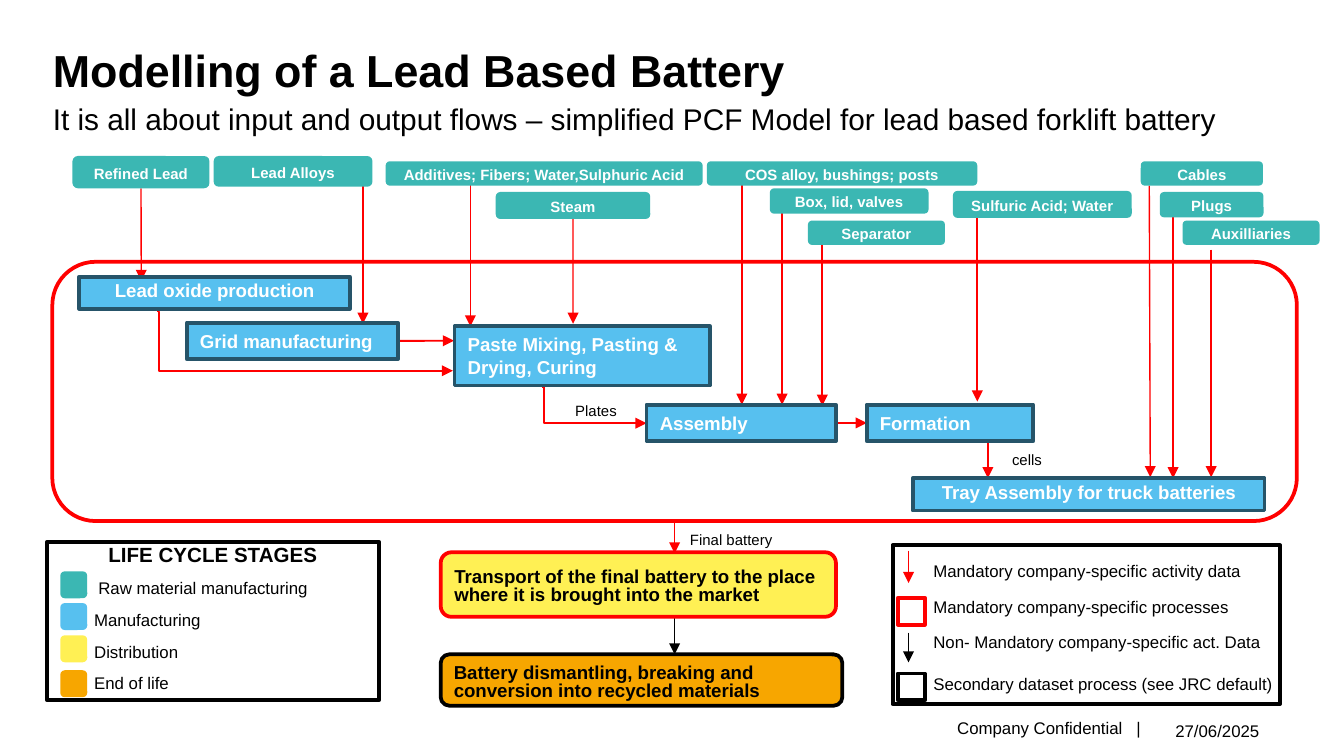
"""Build the slide on the product carbon footprint model of a lead based battery."""
import lxml.etree
import pptx
import pptx.dml.color
import pptx.enum.shapes
import pptx.enum.text
import pptx.oxml.ns
import pptx.util

Cm, Pt = pptx.util.Cm, pptx.util.Pt
RGBColor = pptx.dml.color.RGBColor
Kind = pptx.enum.shapes.MSO_SHAPE
Wire = pptx.enum.shapes.MSO_CONNECTOR
Align = pptx.enum.text.PP_ALIGN
Anchor = pptx.enum.text.MSO_ANCHOR
qn = pptx.oxml.ns.qn

BLACK = RGBColor(0x00, 0x00, 0x00)
WHITE = RGBColor(0xFF, 0xFF, 0xFF)
RED = RGBColor(0xFF, 0x00, 0x00)
TEAL = RGBColor(0x3B, 0xB7, 0xB3)
BLUE = RGBColor(0x57, 0xC0, 0xEF)
NAVY = RGBColor(0x26, 0x54, 0x69)
YELLOW = RGBColor(0xFF, 0xF0, 0x54)
ORANGE = RGBColor(0xF7, 0xA6, 0x00)

FLAT = (0, 0, 0, 0)
WIDE = (0.25, 0.13, 0.25, 0.13)
TIGHT = (0.2, 0.3, 0.2, 0.2)

deck = pptx.Presentation()
deck.slide_width, deck.slide_height = Cm(25.4), Cm(14.29)
slide = deck.slides.add_slide(deck.slide_layouts[6])
shapes = slide.shapes


def draw(box, kind=None, fill=None, line=None, width=2, pad=FLAT, anchor=Anchor.TOP):
    place = [Cm(size) for size in box]
    if kind is None:
        shape = shapes.add_textbox(*place)
    else:
        shape = shapes.add_shape(kind, *place)
        shape.shadow.inherit = False
        if fill is None:
            shape.fill.background()
        else:
            shape.fill.solid()
            shape.fill.fore_color.rgb = fill
        if line is None:
            shape.line.fill.background()
        else:
            shape.line.color.rgb = line
            shape.line.width = Pt(width)
    frame = shape.text_frame
    frame.word_wrap = True
    frame.vertical_anchor = anchor
    frame.margin_left, frame.margin_top, frame.margin_right, frame.margin_bottom = map(Cm, pad)
    return shape


def write(shape, text, size=10, bold=False, color=BLACK, align=Align.LEFT,
          lead=None, before=0, after=0, indent=0):
    frame = shape.text_frame
    para = frame.add_paragraph() if frame.text else frame.paragraphs[0]
    if indent:
        para._p.get_or_add_pPr().set("marL", str(Cm(indent)))
    para.alignment = align
    if lead:
        para.line_spacing = lead
    para.space_before, para.space_after = Pt(before), Pt(after)
    run = para.add_run()
    run.text = text
    run.font.name, run.font.size, run.font.bold = "Arial", Pt(size), bold
    run.font.color.rgb = color


write(draw((13, 13.54, 8.56, 0.41), anchor=Anchor.BOTTOM),
      "Company Confidential   |", size=9, align=Align.RIGHT, lead=0.8)
write(draw((21.74, 13.49, 2.06, 0.51), anchor=Anchor.BOTTOM),
      "27/06/2025", size=9, align=Align.RIGHT, lead=0.8)
write(draw((1, 0.69, 23.4, 1.14), anchor=Anchor.BOTTOM),
      "Modelling of a Lead Based Battery", size=24, bold=True)
write(draw((1, 1.98, 23.4, 0.64), anchor=Anchor.MIDDLE),
      "It is all about input and output flows – simplified PCF Model for lead based forklift battery",
      size=16, lead=0.8)

frame = draw((0.99, 4.95, 23.52, 4.9), Kind.ROUNDED_RECTANGLE, WHITE, RED)

wires = {}
for name, ends, color, width, bend in [
    ("refined", (2.67, 3.56, 2.67, 5.31), RED, 0.75, None),
    ("alloys", (6.86, 3.51, 6.86, 6.12), RED, 0.75, None),
    ("additives", (8.89, 3.38, 8.89, 6.17), RED, 0.75, None),
    ("steam", (10.83, 4.14, 10.83, 6.12), RED, 0.75, None),
    ("posts", (14.02, 3.45, 14.02, 7.65), RED, 0.75, None),
    ("lid", (14.78, 4.01, 14.78, 7.65), RED, 1, None),
    ("separator", (15.54, 4.6, 15.54, 7.67), RED, 1, None),
    ("acid", (18.47, 4.06, 18.47, 7.59), RED, 1, None),
    ("cables", (21.72, 3.51, 21.74, 9.02), RED, 0.75, None),
    ("plugs", (22.17, 4.06, 22.17, 9.04), RED, 0.75, None),
    ("extras", (22.89, 4.72, 22.89, 9.02), RED, 0.75, None),
    ("oxide", (2.97, 5.89, 8.56, 7.01), RED, 1, 600),
    ("plates", (10.24, 7.32, 12.22, 8), RED, 1, 2100),
    ("grid", (7.52, 6.44, 8.58, 6.44), RED, 1, None),
    ("formed", (15.8, 8, 16.38, 8), RED, 1, None),
    ("cells", (18.67, 8.33, 18.67, 9.04), RED, 0.75, None),
    ("final", (12.75, 9.85, 12.75, 10.46), RED, 0.75, None),
    ("scrap", (12.75, 11.68, 12.75, 12.37), BLACK, 0.75, None),
    ("must", (17.17, 10.41, 17.17, 11.02), RED, 0.75, None),
    ("may", (17.17, 11.96, 17.17, 12.52), BLACK, 0.75, None),
]:
    kind = Wire.ELBOW if bend else Wire.STRAIGHT
    wire = shapes.add_connector(kind, *[Cm(end) for end in ends])
    wire.line.color.rgb = color
    wire.line.width = Pt(width)
    props = wire._element.spPr
    lxml.etree.SubElement(props.find(qn("a:ln")), qn("a:tailEnd"), type="triangle")
    lxml.etree.SubElement(props, qn("a:effectLst"))
    if bend:
        guides = props.find(qn("a:prstGeom")).get_or_add_avLst()
        lxml.etree.SubElement(guides, qn("a:gd"), name="adj1", fmla=f"val {bend}")
    wires[name] = wire

steps = {}
for text, box, style in [
    ("Lead oxide production", (1.5, 5.23, 5.11, 0.61), {"align": Align.CENTER, "lead": 0.8}),
    ("Grid manufacturing", (3.53, 6.1, 3.99, 0.69), {}),
    ("Paste Mixing, Pasting & Drying, Curing", (8.59, 6.17, 4.83, 1.12), {}),
    ("Assembly", (12.22, 7.65, 3.58, 0.69), {}),
    ("Formation", (16.38, 7.65, 3.15, 0.69), {}),
    ("Tray Assembly for truck batteries", (17.25, 9.04, 6.65, 0.61),
     {"align": Align.CENTER, "lead": 0.8}),
]:
    steps[text] = draw(box, Kind.RECTANGLE, BLUE, NAVY, pad=WIDE)
    write(steps[text], text, bold=True, color=WHITE, **style)

inputs = {}
for text, box in [
    ("Refined Lead", (1.37, 2.95, 2.59, 0.61)),
    ("Lead Alloys", (4.04, 2.95, 3, 0.58)),
    ("Additives; Fibers; Water,Sulphuric Acid", (7.29, 3.05, 5.99, 0.46)),
    ("Steam", (9.37, 3.63, 2.92, 0.51)),
    ("COS alloy, bushings; posts", (13.36, 3.05, 5.11, 0.46)),
    ("Box, lid, valves", (14.55, 3.56, 3, 0.48)),
    ("Separator", (15.27, 4.17, 2.59, 0.46)),
    ("Sulfuric Acid; Water", (18.01, 3.61, 3.38, 0.51)),
    ("Cables", (21.56, 3.05, 2.31, 0.46)),
    ("Plugs", (21.92, 3.63, 1.96, 0.48)),
    ("Auxilliaries", (22.35, 4.17, 2.59, 0.46)),
]:
    inputs[text] = draw(box, Kind.ROUNDED_RECTANGLE, TEAL, pad=TIGHT, anchor=Anchor.MIDDLE)
    write(inputs[text], text, size=8, bold=True, color=WHITE, align=Align.CENTER, lead=0.8)

for name, shape, side in [("refined", inputs["Refined Lead"], 2), ("steam", inputs["Steam"], 2),
                          ("grid", steps["Grid manufacturing"], 3),
                          ("formed", steps["Assembly"], 3), ("final", frame, 2)]:
    wires[name].begin_connect(shape, side)
wires["formed"].end_connect(steps["Formation"], 1)

for text, box, fill, line in [
    ("Transport of the final battery to the place where it is brought into the market",
     (8.33, 10.44, 7.47, 1.22), YELLOW, RED),
    ("Battery dismantling, breaking and conversion into recycled materials",
     (8.33, 12.37, 7.59, 0.97), ORANGE, BLACK),
]:
    stage = draw(box, Kind.ROUNDED_RECTANGLE, fill, line, pad=TIGHT, anchor=Anchor.MIDDLE)
    write(stage, text, bold=True, lead=0.8)

for text, box in [("Plates", (10.59, 7.52, 1.35, 0.53)), ("cells", (18.85, 8.46, 1.12, 0.53)),
                  ("Final battery", (12.5, 9.96, 2.64, 0.53))]:
    write(draw(box, pad=WIDE), text, size=8, align=Align.CENTER, lead=0.8)

cycle = draw((0.89, 10.24, 6.27, 3), Kind.RECTANGLE, WHITE, BLACK)
write(cycle, "LIFE CYCLE STAGES", size=11, bold=True, align=Align.CENTER, after=3)
for text, fill, top, indent in [
    ("Raw material manufacturing", TEAL, 10.8, 0.97),
    ("Manufacturing", BLUE, 11.4, 0.89),
    ("Distribution", YELLOW, 12.01, 0.89),
    ("End of life", ORANGE, 12.67, 0.89),
]:
    write(cycle, text, size=9, lead=Pt(11), before=3, after=3, indent=indent)
    draw((1.14, top, 0.51, 0.51), Kind.ROUNDED_RECTANGLE, fill)

key = draw((16.87, 10.31, 7.32, 3), Kind.RECTANGLE, line=BLACK, width=2.25, pad=(0, 0.1, 0, 0))
for text, lead, before in [
    ("Mandatory company-specific activity data", 1.5, 0),
    ("Mandatory company-specific processes", Pt(13), 3),
    ("Non- Mandatory company-specific act. Data", Pt(13), 3),
    ("Secondary dataset process (see JRC default)", 1.5, 3),
]:
    write(key, text, size=9, lead=lead, before=before, after=3, indent=0.77)
draw((16.97, 11.3, 0.51, 0.51), Kind.RECTANGLE, WHITE, RED)
draw((16.97, 12.73, 0.51, 0.51), Kind.RECTANGLE, line=BLACK)

deck.save("out.pptx")
